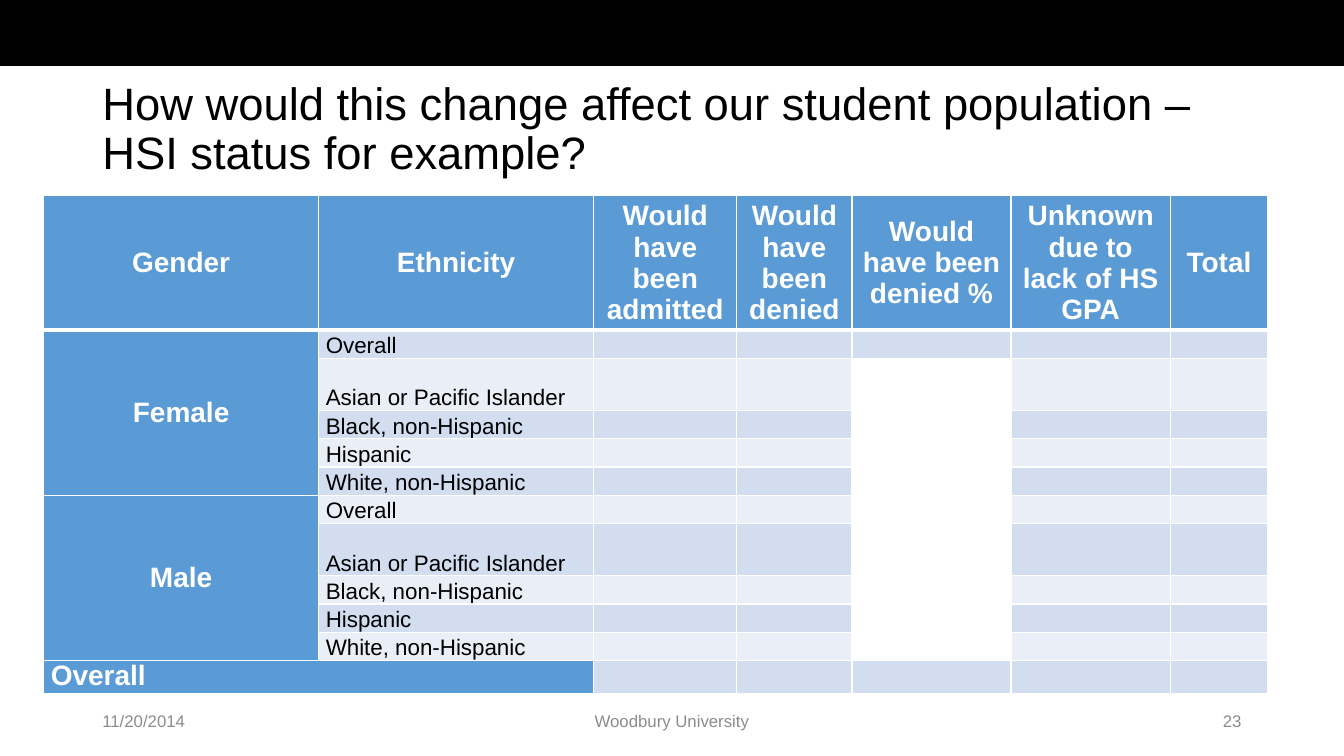
from lxml import etree
from pptx import Presentation
from pptx.dml.color import RGBColor
from pptx.enum.shapes import MSO_SHAPE
from pptx.enum.text import MSO_ANCHOR, PP_ALIGN
from pptx.oxml.ns import qn
from pptx.util import Cm, Pt

LEFT, CENTER, RIGHT = PP_ALIGN.LEFT, PP_ALIGN.CENTER, PP_ALIGN.RIGHT
TOP, MIDDLE, BOTTOM = MSO_ANCHOR.TOP, MSO_ANCHOR.MIDDLE, MSO_ANCHOR.BOTTOM

TITLE = "How would this change affect our student population – HSI status for example?"
FOOTERS = [  # text, left, width, alignment
    ("11/20/2014", 2.33, 7.62, LEFT),
    ("Woodbury University", 11.22, 11.43, CENTER),
    ("23", 23.92, 7.62, RIGHT),
]
HEADERS = ["Gender", "Ethnicity", "Would have been admitted", "Would have been denied",
           "Would have been denied %", "Unknown due to lack of HS GPA", "Total"]
GENDERS = ["Female", "Male"]
ETHNICITIES = ["Overall", "Asian or Pacific Islander", "Black, non-Hispanic",
               "Hispanic", "White, non-Hispanic"]
TOTAL_LABEL = "Overall"

COL_WIDTHS = [6.93, 6.93, 3.61, 2.9, 4.01, 4.01, 2.46]
GROUP_HEIGHTS = [0.71, 1.32, 0.71, 0.71, 0.71]
ROW_HEIGHTS = [3.28] + GROUP_HEIGHTS * len(GENDERS) + [0.79]
PERCENT_COL = 4
BLUE, BANDS = "5B9BD5", ["EAEFF7", "D2DEEF"]
BLACK, WHITE, GREY = "000000", "FFFFFF", "8C8C8C"


def rgb(color):
    return RGBColor.from_string(color)


def write(tf, text, size, color, align=LEFT, bold=False):
    tf.text = text
    p = tf.paragraphs[0]
    p.alignment = align
    for r in p.runs:
        r.font.name, r.font.size, r.font.bold = "Arial", Pt(size), bold
        r.font.color.rgb = rgb(color)
    return p


def add_text(slide, box, text, size, color, align=LEFT):
    tf = slide.shapes.add_textbox(*map(Cm, box)).text_frame
    tf.word_wrap = True
    tf.vertical_anchor = MIDDLE
    return write(tf, text, size, color, align)


def style_cell(cell, row, fill):
    """Set margins, white borders and fill; the header rule is thicker."""
    cell.margin_left = cell.margin_right = Cm(0.18)
    cell.margin_top = cell.margin_bottom = 0
    tc_pr = cell._tc.get_or_add_tcPr()
    for side in "LRTB":
        thick = (row, side) in ((0, "B"), (1, "T"))
        ln = etree.SubElement(tc_pr, qn(f"a:ln{side}"), w=str(Pt(3 if thick else 1)))
        solid = etree.SubElement(ln, qn("a:solidFill"))
        etree.SubElement(solid, qn("a:srgbClr"), val=WHITE)
    if fill:
        cell.fill.solid()
        cell.fill.fore_color.rgb = rgb(fill)
    else:
        cell.fill.background()
    # Small type keeps empty cells from stretching their row
    etree.SubElement(cell.text_frame.paragraphs[0]._p, qn("a:endParaRPr"), sz="1200")


def label(cell, text, align=CENTER, anchor=MIDDLE):
    write(cell.text_frame, text, 20, WHITE, align, True)
    cell.vertical_anchor = anchor


def cell_fill(row, col):
    last = len(ROW_HEIGHTS) - 1
    if row == 0 or col == 0 or (row == last and col == 1):
        return BLUE
    if col == PERCENT_COL and 1 < row < last:
        return None
    return BANDS[row % 2]


def add_population_table(slide):
    rows, cols = len(ROW_HEIGHTS), len(COL_WIDTHS)
    table = slide.shapes.add_table(rows, cols, Cm(1.1), Cm(4.93), Cm(sum(COL_WIDTHS)),
                                   Cm(sum(ROW_HEIGHTS))).table
    table.first_row = table.horz_banding = False
    for column, width in zip(table.columns, COL_WIDTHS):
        column.width = Cm(width)
    for i, height in enumerate(ROW_HEIGHTS):
        table.rows[i].height = Cm(height)
        for j in range(cols):
            style_cell(table.cell(i, j), i, cell_fill(i, j))

    for j, text in enumerate(HEADERS):
        label(table.cell(0, j), text)
    size = len(ETHNICITIES)
    for g, gender in enumerate(GENDERS):
        first = 1 + g * size
        table.cell(first, 0).merge(table.cell(first + size - 1, 0))
        label(table.cell(first, 0), gender)
        for i, ethnicity in enumerate(ETHNICITIES, first):
            cell = table.cell(i, 1)
            write(cell.text_frame, ethnicity, 16, BLACK)
            cell.vertical_anchor = BOTTOM
    table.cell(rows - 1, 0).merge(table.cell(rows - 1, 1))
    label(table.cell(rows - 1, 0), TOTAL_LABEL, LEFT, TOP)


def main():
    prs = Presentation()
    prs.slide_width, prs.slide_height = Cm(33.87), Cm(19.05)
    s = prs.slides.add_slide(prs.slide_layouts[6])

    band = s.shapes.add_shape(MSO_SHAPE.RECTANGLE, 0, 0, prs.slide_width, Cm(1.66))
    band.shadow.inherit = False
    band.fill.solid()
    band.fill.fore_color.rgb = rgb(BLACK)
    band.line.fill.background()

    add_text(s, (2.33, 1.88, 29.21, 2.8), TITLE, 32.4, BLACK).line_spacing = 0.9
    for text, left, width, align in FOOTERS:
        add_text(s, (left, 17.66, width, 1.01), text, 12, GREY, align)
    add_population_table(s)
    prs.save("out.pptx")


if __name__ == "__main__":
    main()
